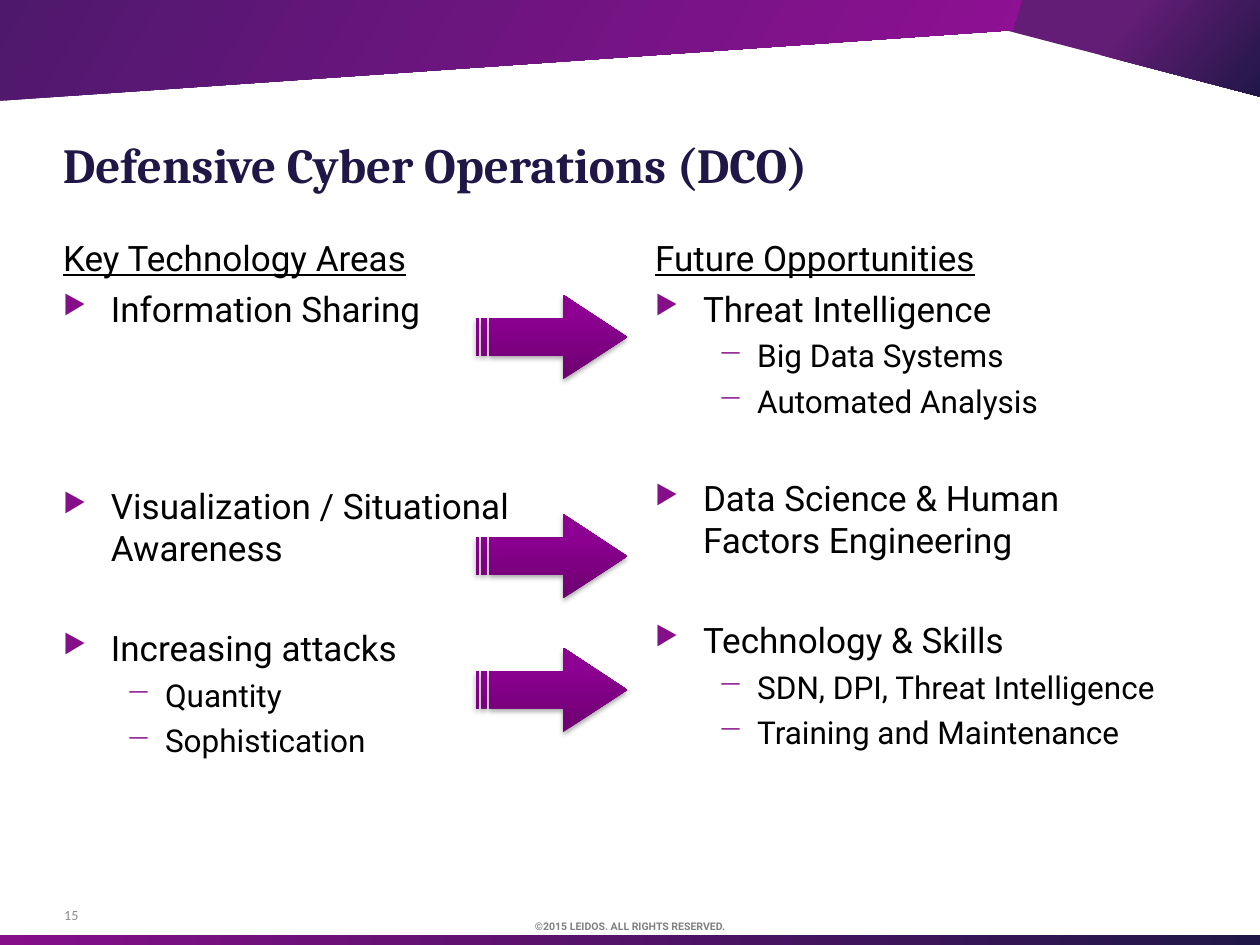
import pptx
import pptx.dml.color
import pptx.enum.shapes
import pptx.enum.text
import pptx.oxml
import pptx.oxml.ns
import pptx.util
from lxml import etree
from pptx.util import Inches

PURPLE = "850F89"
NAVY = "201747"
BLACK = "000000"
BLANK_LINE = 28.1  # height in points of one skipped 20 pt line

# Text size, space before, left edge, hanging indent, bullet, bullet size in percent
LEVELS = {
    "item": (20, 4.7, 0.38, 0.38, "▶", 75),
    "detail": (18, 4.2, 0.81, 0.31, "−", 100),
}

# Each line: level, text, skipped lines above it
TECHNOLOGY_AREAS = [
    ("item", "Information Sharing", 0),
    ("item", "Visualization / Situational Awareness", 3),
    ("item", "Increasing attacks", 1),
    ("detail", "Quantity", 0),
    ("detail", "Sophistication", 0),
]
OPPORTUNITIES = [
    ("item", "Threat Intelligence", 0),
    ("detail", "Big Data Systems", 0),
    ("detail", "Automated Analysis", 0),
    ("item", "Data Science & Human Factors Engineering", 1),
    ("item", "Technology & Skills", 1),
    ("detail", "SDN, DPI, Threat Intelligence", 0),
    ("detail", "Training and Maintenance", 0),
]


def color(value):
    return pptx.dml.color.RGBColor.from_string(value)


def add_xml(parent, tag, **attributes):
    return etree.SubElement(parent, pptx.oxml.ns.qn(tag), attributes)


def style_gradient(shape, stops, angle=0):
    """Fill with a gradient whose angle runs clockwise, without outline or shadow."""
    shape.shadow.inherit = False
    shape.line.fill.background()
    shape.fill.gradient()
    shape.fill.gradient_angle = (360 - angle) % 360
    stop_list = shape._element.spPr.find(".//" + pptx.oxml.ns.qn("a:gsLst"))
    for stop in list(stop_list):
        stop_list.remove(stop)
    for position, value in stops:
        stop = add_xml(stop_list, "a:gs", pos=str(position * 1000))
        add_xml(stop, "a:srgbClr", val=value)


def add_panel(page, points, stops, angle):
    corners = [(Inches(x), Inches(y)) for x, y in points]
    builder = page.shapes.build_freeform(*corners[0], scale=1.0)
    builder.add_line_segments(corners[1:], close=True)
    style_gradient(builder.convert_to_shape(), stops, angle)


def add_box(page, left, top, width, height, anchor="TOP", side_insets=(0, 0.1)):
    box = page.shapes.add_textbox(*map(Inches, (left, top, width, height)))
    frame = box.text_frame
    frame.word_wrap = True
    frame.vertical_anchor = pptx.enum.text.MSO_ANCHOR[anchor]
    frame.margin_left, frame.margin_right = map(Inches, side_insets)
    frame.margin_top = frame.margin_bottom = Inches(0.05)
    return frame


def add_span(para, text, size, font="Roboto", ink=BLACK, bold=False, underline=False):
    span = para.add_run()
    span.text = text
    span.font.name = font
    span.font.size = pptx.util.Pt(size)
    span.font.color.rgb = color(ink)
    span.font.bold = bold
    span.font.underline = underline


def add_bullet(para, left, hanging, symbol, percent):
    properties = para._p.get_or_add_pPr()
    properties.set("marL", str(Inches(left)))
    properties.set("indent", str(-Inches(hanging)))
    tint = add_xml(properties, "a:buClr")
    add_xml(tint, "a:srgbClr", val=PURPLE)
    add_xml(properties, "a:buSzPct", val=str(percent * 1000))
    add_xml(properties, "a:buChar", char=symbol)


def add_column(page, left, width, heading, lines):
    frame = add_box(page, left, 1.83, width, 4.69)
    add_span(frame.paragraphs[0], heading, 20, underline=True)
    for level, text, skipped in lines:
        size, gap, indent, hanging, symbol, percent = LEVELS[level]
        para = frame.add_paragraph()
        add_bullet(para, indent, hanging, symbol, percent)
        para.space_before = pptx.util.Pt(gap + skipped * BLANK_LINE)
        add_span(para, text, size)


def add_arrow(page, top):
    arrow = page.shapes.add_shape(
        pptx.enum.shapes.MSO_SHAPE.STRIPED_RIGHT_ARROW,
        Inches(3.78), Inches(top), Inches(1.2), Inches(0.67))
    arrow.adjustments[0] = 0.44
    arrow.adjustments[1] = 0.76
    style_gradient(arrow, [(0, "6E0071"), (80, "8E0093"), (100, "8F0094")], 270)
    # Soft shadow straight below
    effects = arrow._element.spPr.find(pptx.oxml.ns.qn("a:effectLst"))
    shadow = add_xml(effects, "a:outerShdw", blurRad=str(pptx.util.Pt(3.1)),
                     dist=str(pptx.util.Pt(1.8)), dir="5400000", rotWithShape="0")
    tint = add_xml(shadow, "a:srgbClr", val=BLACK)
    add_xml(tint, "a:alpha", val="35000")


def add_decoration(page):
    bar = page.shapes.add_shape(
        pptx.enum.shapes.MSO_SHAPE.RECTANGLE,
        0, Inches(7.42), Inches(10), Inches(0.08))
    style_gradient(bar, [(0, PURPLE), (100, NAVY)])
    add_panel(page, [(8.06, 0), (10.01, 0), (10.01, 0.77), (7.98, 0.24)],
              [(40, "641D76"), (100, NAVY)], 40)
    add_panel(page, [(0, 0.8), (-0.02, 0), (8.11, 0), (8.04, 0.24)],
              [(0, "4E196D"), (100, "901094")], 30)


def add_footer(page):
    para = add_box(page, 0, 7.25, 10, 0.21, side_insets=(0.1, 0.1)).paragraphs[0]
    para.alignment = pptx.enum.text.PP_ALIGN.CENTER
    add_span(para, "©2015 LEIDOS. ALL RIGHTS RESERVED.", 6, ink="808080", bold=True)
    number = add_box(page, 0.51, 7.06, 2.33, 0.4, "MIDDLE", (0, 0))
    add_span(number.paragraphs[0], "15", 8, "Calibri", "8C8C8C")


def add_title(page, text):
    para = add_box(page, 0.5, 0.81, 9, 1.04, "MIDDLE").paragraphs[0]
    para.line_spacing = pptx.util.Pt(30)
    add_span(para, text, 28, "Cambria", NAVY, bold=True)


def main():
    deck = pptx.Presentation()
    deck.slide_width, deck.slide_height = Inches(10), Inches(7.5)
    page = deck.slides.add_slide(deck.slide_layouts[6])

    add_decoration(page)
    add_footer(page)

    # Two text columns under the title
    add_column(page, 0.5, 3.72, "Key Technology Areas", TECHNOLOGY_AREAS)
    add_column(page, 5.2, 4.3, "Future Opportunities", OPPORTUNITIES)
    add_title(page, "Defensive Cyber Operations (DCO)")

    # Arrows from each area to its opportunity
    for top in (2.34, 4.08, 5.14):
        add_arrow(page, top)

    deck.save("out.pptx")


if __name__ == "__main__":
    main()
